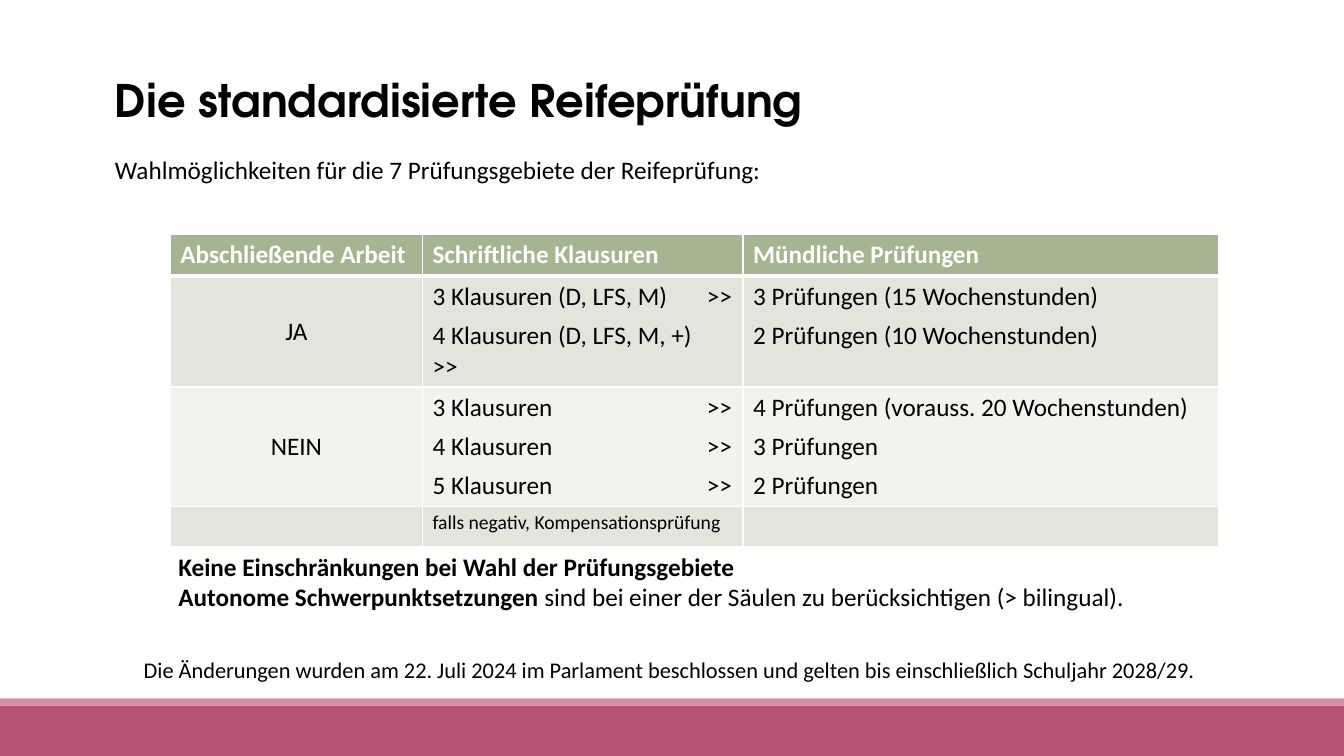
from dataclasses import dataclass
from typing import Any

import pptx
import pptx.dml.color
import pptx.enum.shapes
import pptx.enum.text
import pptx.oxml
import pptx.oxml.ns
import pptx.util

Inches = pptx.util.Inches
Pt = pptx.util.Pt
ALIGN = pptx.enum.text.PP_ALIGN
ANCHOR = pptx.enum.text.MSO_ANCHOR

COLOURS = {
    "text": "000000", "white": "FFFFFF", "band": "B55475", "stripe": "D092A7",
    "header": "A5B592", "dark_row": "E1E5DC", "light_row": "F0F3EE",
}


@dataclass
class Span:
    """A stretch of text in one style."""
    text: str
    bold: bool = False


@dataclass
class Box:
    """A position and size in inches."""
    left: float
    top: float
    width: float
    height: float

    def emu(self) -> tuple:
        """Return the position and size as lengths."""
        return tuple(Inches(v) for v in (self.left, self.top, self.width, self.height))


@dataclass
class Row:
    """A table row with lists of lines per cell."""
    height: float
    fill: str
    cells: list[list[str]]
    size: int = 18
    bold: bool = False
    colour: str = "text"
    after: int = 6
    top_line: int = 1
    bottom_line: int = 1


@dataclass
class Band:
    """A coloured strip at the foot of the slide."""
    box: Box
    fill: str


@dataclass
class Note:
    """A text box below the table."""
    box: Box
    lines: list[list[Span]]
    size: int
    align: Any


BANDS = [
    Band(Box(0, 7, 13.33, 0.5), "band"),
    Band(Box(0, 6.93, 13.33, 0.07), "stripe"),
]
EXAM_ROWS = [
    Row(0.41, "header", [["Abschließende Arbeit"], ["Schriftliche Klausuren"],
                         ["Mündliche Prüfungen"]],
        bold=True, colour="white", after=0, bottom_line=3),
    Row(1.08, "dark_row", [["JA"],
                           ["3 Klausuren (D, LFS, M)\t>>", "4 Klausuren (D, LFS, M, +)\n>>"],
                           ["3 Prüfungen (15 Wochenstunden)",
                            "2 Prüfungen (10 Wochenstunden)"]], top_line=3),
    Row(1.16, "light_row", [["NEIN"],
                            [f"{count} Klausuren\t>>" for count in (3, 4, 5)],
                            ["4 Prüfungen (vorauss. 20 Wochenstunden)",
                             "3 Prüfungen", "2 Prüfungen"]]),
    Row(0.4, "dark_row", [[], ["falls negativ, Kompensationsprüfung"], []], size=14),
]
INTRO_ROWS = [
    Row(0.4, "white", [["Wahlmöglichkeiten für die 7 Prüfungsgebiete der Reifeprüfung:"]],
        after=0, top_line=0, bottom_line=0),
]
NOTES = [
    Note(Box(1.67, 5.42, 9.95, 0.71),
         [[Span("Keine Einschränkungen bei Wahl der Prüfungsgebiete", True)],
          [Span("Autonome Schwerpunktsetzungen ", True),
           Span("sind bei einer der Säulen zu berücksichtigen (> bilingual).")]],
         18, ALIGN.LEFT),
    Note(Box(1.04, 6.46, 11.2, 0.67),
         [[Span("Die Änderungen wurden am 22. Juli 2024 im Parlament beschlossen "
                "und gelten bis einschließlich Schuljahr 2028/29.")]],
         16, ALIGN.CENTER),
]


def rgb(name: str) -> pptx.dml.color.RGBColor:
    """Look up a colour by name."""
    return pptx.dml.color.RGBColor.from_string(COLOURS[name])


def add_span(paragraph: Any, span: Span, size: int, colour: str = "text",
             typeface: str = "Calibri") -> None:
    """Add one styled run."""
    run = paragraph.add_run()
    run.text = span.text
    run.font.name = typeface
    run.font.size = Pt(size)
    run.font.bold = span.bold
    run.font.color.rgb = rgb(colour)


def next_paragraph(frame: Any, index: int) -> Any:
    """Return the first paragraph or append another."""
    return frame.add_paragraph() if index else frame.paragraphs[0]


def add_band(slide: Any, band: Band) -> None:
    """Draw a strip without outline."""
    strip = slide.shapes.add_shape(pptx.enum.shapes.MSO_SHAPE.RECTANGLE, *band.box.emu())
    strip.shadow.inherit = False
    strip.fill.solid()
    strip.fill.fore_color.rgb = rgb(band.fill)
    strip.line.fill.background()


def set_title(slide: Any, text: str) -> None:
    """Place and format the title."""
    title = slide.shapes.title
    title.left, title.top, title.width, title.height = Box(1.04, 0.69, 11.5, 0.67).emu()
    frame = title.text_frame
    frame.auto_size = pptx.enum.text.MSO_AUTO_SIZE.NONE
    frame.vertical_anchor = ANCHOR.MIDDLE
    heading = frame.paragraphs[0]
    heading.alignment = ALIGN.LEFT
    heading.line_spacing = 0.9
    add_span(heading, Span(text, True), 32, typeface="TeX Gyre Adventor")


def set_borders(cell: Any, row: Row) -> None:
    """Give a cell white borders, or none where the width is zero."""
    widths = {"L": min(row.top_line, 1), "R": min(row.top_line, 1),
              "T": row.top_line, "B": row.bottom_line}
    namespace = pptx.oxml.ns.nsdecls("a")
    for index, (side, width) in enumerate(widths.items()):
        paint = (f'<a:solidFill><a:srgbClr val="{COLOURS["white"]}"/></a:solidFill>'
                 if width else "<a:noFill/>")
        line = pptx.oxml.parse_xml(
            f'<a:ln{side} {namespace} w="{int(Pt(width))}">{paint}</a:ln{side}>')
        cell._tc.get_or_add_tcPr().insert(index, line)


def add_tab_stop(paragraph: Any, position: float) -> None:
    """Add a left tab stop at a distance in inches."""
    stops = pptx.oxml.parse_xml(
        f'<a:tabLst {pptx.oxml.ns.nsdecls("a")}>'
        f'<a:tab pos="{int(Inches(position))}" algn="l"/></a:tabLst>')
    paragraph._p.get_or_add_pPr().append(stops)


def fill_cell(cell: Any, row: Row, lines: list[str], centred: bool) -> None:
    """Paint a cell and write its lines."""
    cell.fill.solid()
    cell.fill.fore_color.rgb = rgb(row.fill)
    set_borders(cell, row)
    cell.vertical_anchor = ANCHOR.MIDDLE if centred else ANCHOR.TOP
    for index, line in enumerate(lines):
        paragraph = next_paragraph(cell.text_frame, index)
        paragraph.alignment = ALIGN.CENTER if centred else ALIGN.LEFT
        paragraph.space_after = Pt(row.after)
        if "\t" in line:
            add_tab_stop(paragraph, 2.72)
        for part_index, part in enumerate(line.split("\n")):
            if part_index:
                paragraph.add_line_break()
            add_span(paragraph, Span(part, row.bold), row.size, row.colour)


def add_rows(slide: Any, left: float, top: float, widths: list[float],
             rows: list[Row]) -> None:
    """Draw a table from its rows."""
    box = Box(left, top, sum(widths), sum(row.height for row in rows))
    table = slide.shapes.add_table(len(rows), len(widths), *box.emu()).table
    table.first_row = len(rows) > 1
    table.horz_banding = False
    for column, width in zip(table.columns, widths):
        column.width = Inches(width)
    for row_index, row in enumerate(rows):
        table.rows[row_index].height = Inches(row.height)
        for column_index, lines in enumerate(row.cells):
            centred = column_index == 0 and row.after > 0
            fill_cell(table.cell(row_index, column_index), row, lines, centred)


def add_note(slide: Any, note: Note) -> None:
    """Write a wrapped text box."""
    frame = slide.shapes.add_textbox(*note.box.emu()).text_frame
    frame.word_wrap = True
    for index, spans in enumerate(note.lines):
        paragraph = next_paragraph(frame, index)
        paragraph.alignment = note.align
        for span in spans:
            add_span(paragraph, span, note.size)


def main() -> None:
    """Build and save the slide."""
    deck = pptx.Presentation()
    deck.slide_width, deck.slide_height = Inches(13.33), Inches(7.5)
    slide = deck.slides.add_slide(deck.slide_layouts.get_by_name("Title Only"))
    for band in BANDS:
        add_band(slide, band)
    set_title(slide, "Die standardisierte Reifeprüfung")
    add_rows(slide, 1.69, 2.33, [2.5, 3.18, 4.72], EXAM_ROWS)
    add_rows(slide, 1.04, 1.49, [10.78], INTRO_ROWS)
    for note in NOTES:
        add_note(slide, note)
    deck.save("out.pptx")


if __name__ == "__main__":
    main()
